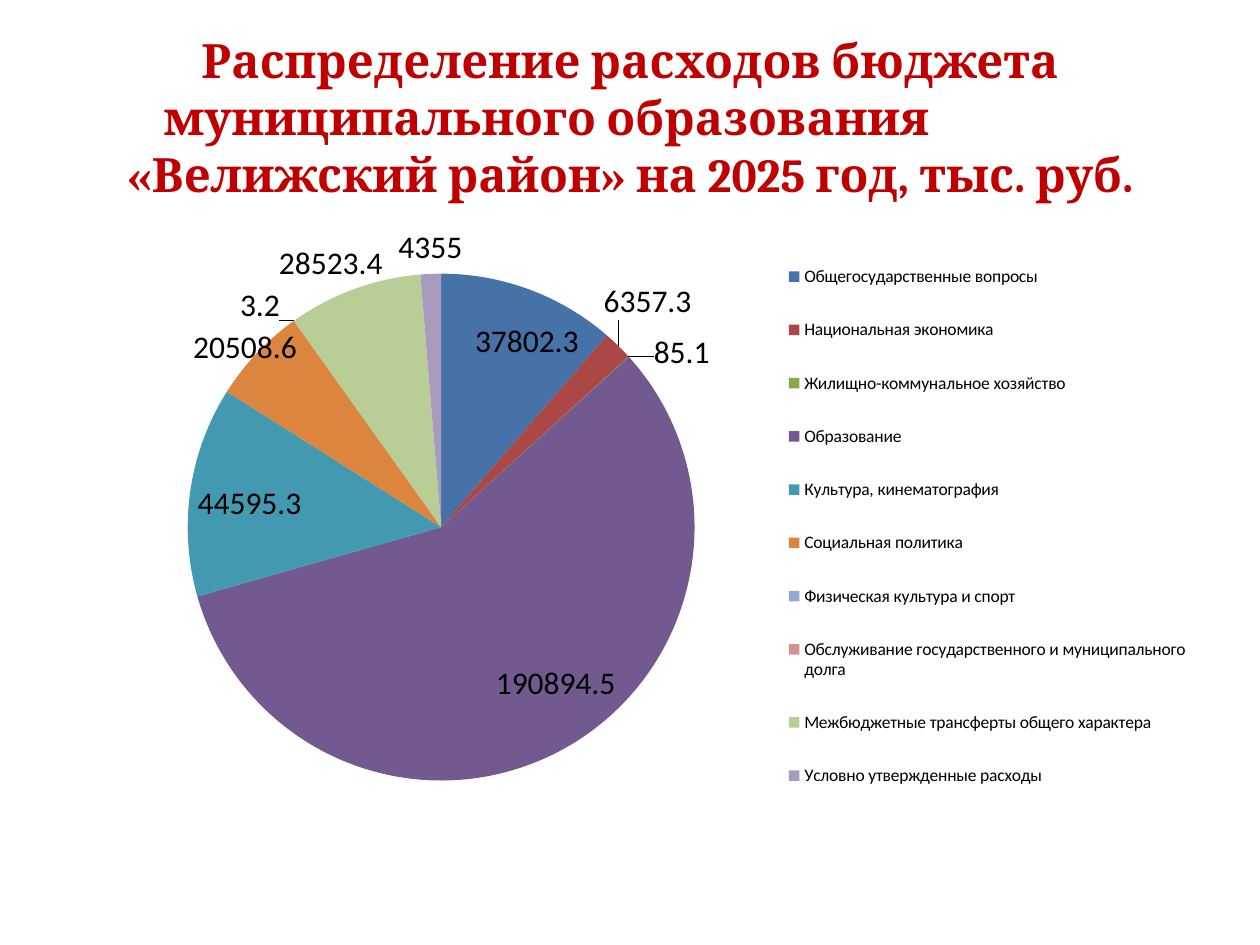
from lxml import etree
from pptx import Presentation
from pptx import util as u
from pptx.chart import data as cd
from pptx.dml.color import RGBColor
from pptx.enum import chart as ch, text as tx
from pptx.oxml import ns

HEAD = [
    ("Распределение расходов бюджета", 0),
    ("муниципального образования", 3.38),
    ("«Велижский район» на 2025 год, тыс. руб.", 0),
]
COSTS = [
    ("Общегосударственные вопросы", 37802.3, "4672A8"),
    ("Национальная экономика", 6357.3, "AB4744"),
    ("Жилищно-коммунальное хозяйство", 85.1, "8AA64F"),
    ("Образование", 190894.5, "725990"),
    ("Культура, кинематография", 44595.3, "4299B0"),
    ("Социальная политика", 20508.6, "DC853E"),
    ("Физическая культура и спорт", None, "93A9D0"),
    ("Обслуживание государственного и муниципального долга", 3.2, "D09493"),
    ("Межбюджетные трансферты общего характера", 28523.4, "B9CD96"),
    ("Условно утвержденные расходы", 4355, "A99BBD"),
]
PLOT = dict(x=0.11, y=0.085, w=0.447, h=0.813)
KEY = dict(x=0.63, y=0.02, w=0.37, h=0.94)
SHIFT = {5: dict(x=0.04, y=0.03)}


def tint(part, code):
    part.rgb = RGBColor.from_string(code)


def style(font, size, face, color, bold=False):
    font.size, font.name, font.bold = u.Pt(size), face, bold
    tint(font.color, color)


def write(par, words, size=27, face="Cambria", color="C00000", bold=True, right=0):
    run = par.add_run()
    run.text = words
    style(run.font, size, face, color, bold)
    par.alignment = tx.PP_ALIGN.CENTER
    par.line_spacing = 1.0
    par._p.get_or_add_pPr().set("marR", str(u.Cm(right)))


def add(node, tag, val=None):
    kid = etree.SubElement(node, ns.qn("c:" + tag))
    if val is not None:
        kid.set("val", str(val))
    return kid


def place(node, spot, inner=False, edge=True):
    for old in node.findall(ns.qn("c:layout")):
        node.remove(old)
    lay = add(node, "layout")
    man = add(lay, "manualLayout")
    if inner:
        add(man, "layoutTarget", "inner")
    if edge:
        for side in "xy":
            add(man, side + "Mode", "edge")
    for side, val in spot.items():
        add(man, side, val)
    return lay


def draw(slide):
    info = cd.CategoryChartData(number_format="General")
    info.categories = [name for name, _, _ in COSTS]
    info.add_series("Series 1", [cost for _, cost, _ in COSTS])
    box = slide.shapes.add_chart(
        ch.XL_CHART_TYPE.PIE, u.Cm(1.27), u.Cm(4.45), u.Cm(22.86), u.Cm(12.57), info)
    pie = box.chart
    pie.has_title = False
    style(pie.font, 18, "Calibri", "000000")
    plot = pie.plots[0]
    plot.vary_by_categories = True
    row = plot.series[0]
    for spot, (_, _, color) in enumerate(COSTS):
        fill = row.points[spot].format.fill
        fill.solid()
        tint(fill.fore_color, color)
    tags = row.data_labels
    tags.show_value = True
    tags.show_percentage = False
    tags.position = ch.XL_LABEL_POSITION.BEST_FIT
    style(tags.font, 18, "Calibri", "000000")
    for spot, move in SHIFT.items():
        tag = row.points[spot].data_label
        style(tag.font, 18, "Calibri", "000000")
        tag.position = ch.XL_LABEL_POSITION.BEST_FIT
        for node in tags._element.findall(ns.qn("c:dLbl")):
            node.find(ns.qn("c:idx")).addnext(place(node, move, edge=False))
    pie.has_legend = True
    key = pie.legend
    key.position = ch.XL_LEGEND_POSITION.RIGHT
    key.include_in_layout = False
    style(key.font, 10, "Calibri", "000000")
    area = pie._chartSpace.chart.plotArea
    area.insert(0, place(area, PLOT, inner=True))
    node = key._element
    node.find(ns.qn("c:legendPos")).addnext(place(node, KEY))


def main():
    deck = Presentation()
    deck.slide_width, deck.slide_height = u.Cm(25.4), u.Cm(19.05)
    slide = deck.slides.add_slide(deck.slide_layouts[5])
    title = slide.shapes.title
    title.left, title.top = u.Cm(1.27), u.Cm(0.76)
    title.width, title.height = u.Cm(22.86), u.Cm(3.18)
    frame = title.text_frame
    frame.word_wrap = True
    frame.vertical_anchor = tx.MSO_ANCHOR.MIDDLE
    for spot, (words, right) in enumerate(HEAD):
        par = frame.add_paragraph() if spot else frame.paragraphs[0]
        write(par, words, right=right)
    draw(slide)
    deck.save("out.pptx")


if __name__ == "__main__":
    main()
